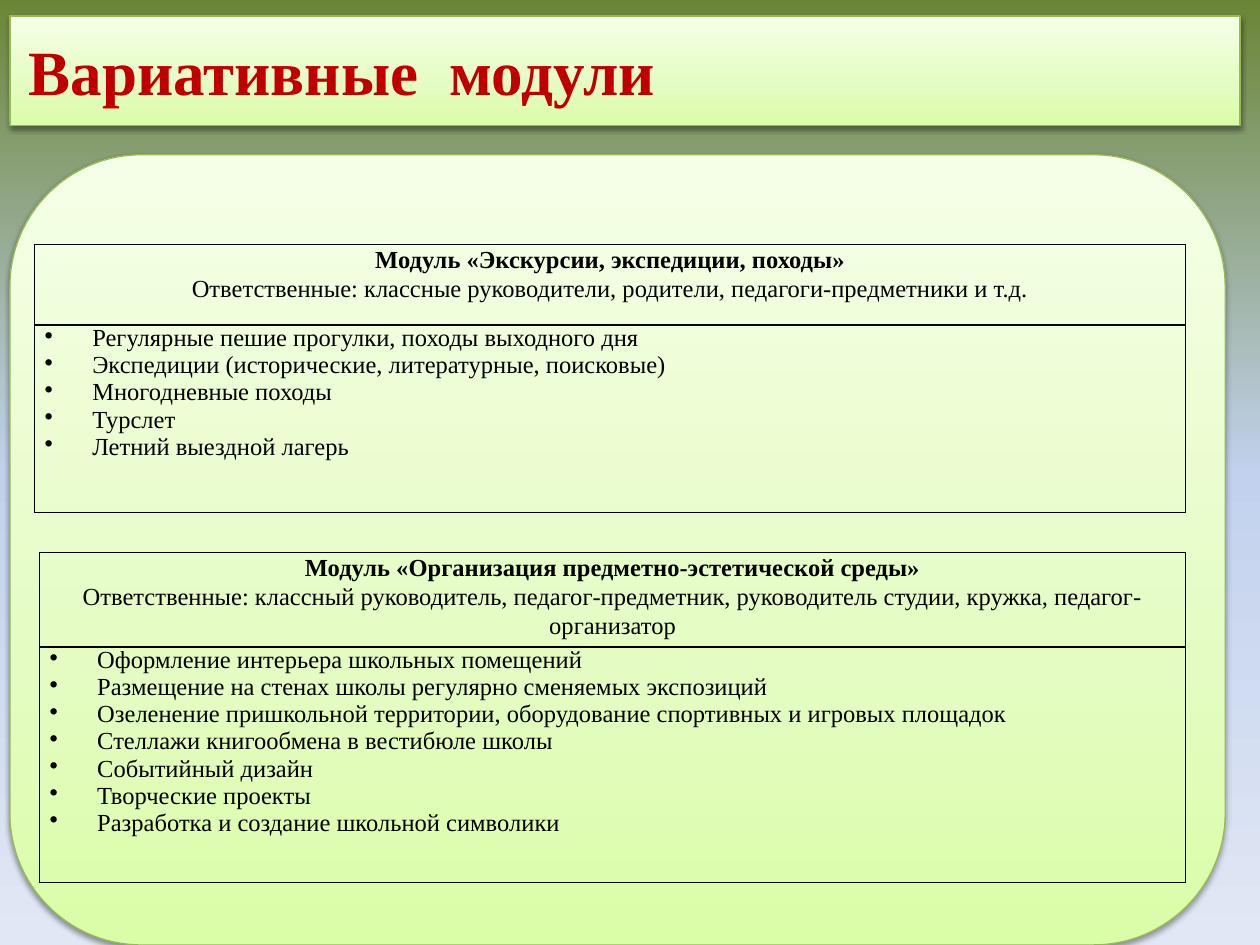
from lxml.etree import SubElement
from pptx import Presentation
from pptx.dml.color import RGBColor
from pptx.enum.shapes import MSO_SHAPE
from pptx.enum.text import MSO_ANCHOR, MSO_AUTO_SIZE, PP_ALIGN
from pptx.oxml.ns import qn
from pptx.util import Cm, Pt

BLACK = RGBColor(0x00, 0x00, 0x00)
RED = RGBColor(0xC0, 0x00, 0x00)
EDGE = RGBColor(0x98, 0xB9, 0x55)
LIME = RGBColor(0xDA, 0xFD, 0xA7)
PALE = RGBColor(0xE4, 0xFC, 0xC2)
CREAM = RGBColor(0xF5, 0xFF, 0xE7)
MOSS = RGBColor(0x6B, 0x85, 0x37)
SKY = RGBColor(0xC2, 0xD1, 0xED)
MIST = RGBColor(0xE1, 0xE8, 0xF5)

PANEL = [(0, LIME, 100), (35, PALE, 100), (100, CREAM, 100)]
BACK = [(0, MOSS, 74), (50, SKY, 100), (100, MIST, 100)]

TRIPS = [
    "Регулярные пешие прогулки, походы выходного дня",
    "Экспедиции (исторические, литературные, поисковые)",
    "Многодневные походы",
    "Турслет",
    "Летний выездной лагерь",
]
DESIGN = [
    "Оформление интерьера школьных помещений",
    "Размещение на стенах школы регулярно сменяемых экспозиций",
    "Озеленение пришкольной территории, оборудование спортивных и игровых площадок",
    "Стеллажи книгообмена в вестибюле школы",
    "Событийный дизайн",
    "Творческие проекты",
    "Разработка и создание школьной символики",
]


def add(root, tag, **attrs):
    return SubElement(root, qn(tag), {k: str(v) for k, v in attrs.items()})


def tint(root, color, alpha=100):
    node = add(root, "a:srgbClr", val=color)
    if alpha < 100:
        add(node, "a:alpha", val=alpha * 1000)


def blend(fill, root, stops, angle):
    fill.gradient()
    fill.gradient_angle = angle
    group = root.find(".//" + qn("a:gsLst"))
    for stop in list(group):
        group.remove(stop)
    for pos, color, alpha in stops:
        tint(add(group, "a:gs", pos=pos * 1000), color, alpha)


class Deck:
    font = "Times New Roman"
    size = Pt(14)

    def __init__(self):
        self.file = Presentation()
        self.file.slide_width = Cm(25.4)
        self.file.slide_height = Cm(19.05)
        self.slide = self.file.slides.add_slide(self.file.slide_layouts[5])
        blend(self.slide.background.fill, self.slide.element, BACK, 270)

    def style(self, para, size, color, bold=False):
        para.font.name = self.font
        para.font.size = size
        para.font.color.rgb = color
        para.font.bold = bold

    def dress(self, shape):
        blend(shape.fill, shape.element, PANEL, 90)
        shape.line.color.rgb = EDGE
        shape.line.width = Pt(0.75)
        shape.shadow.inherit = False
        effects = shape.element.spPr.find(qn("a:effectLst"))
        shadow = add(effects, "a:outerShdw", blurRad=Pt(3.1), dist=Pt(1.6),
                     dir=5400000, rotWithShape=0)
        tint(shadow, BLACK, 38)

    def title(self, text, left, top, width, height):
        shape = self.slide.shapes.title
        shape.left, shape.top = Cm(left), Cm(top)
        shape.width, shape.height = Cm(width), Cm(height)
        props = shape.element.spPr
        form = add(props, "a:prstGeom", prst="roundRect")
        add(form, "a:avLst")
        props.insert(1, form)
        self.dress(shape)
        frame = shape.text_frame
        frame.text = text
        frame.auto_size = MSO_AUTO_SIZE.NONE
        frame.vertical_anchor = MSO_ANCHOR.MIDDLE
        para = frame.paragraphs[0]
        para.alignment = PP_ALIGN.LEFT
        para.space_before, para.space_after = Pt(7), Pt(3)
        para._p.get_or_add_pPr().set("marL", str(Cm(0.13)))
        self.style(para, Pt(36), RED, True)

    def panel(self, left, top, width, height):
        self.dress(self.slide.shapes.add_shape(
            MSO_SHAPE.ROUNDED_RECTANGLE, Cm(left), Cm(top), Cm(width), Cm(height)))

    def frame(self, cell):
        cell.margin_left = cell.margin_right = Cm(0.2)
        cell.margin_top = cell.margin_bottom = 0
        cell.fill.background()
        props = cell._tc.get_or_add_tcPr()
        for spot, side in enumerate(("a:lnL", "a:lnR", "a:lnT", "a:lnB")):
            line = add(props, side, w=Pt(1))
            tint(add(line, "a:solidFill"), BLACK)
            props.insert(spot, line)

    def bullet(self, para):
        props = para._p.get_or_add_pPr()
        props.set("marL", str(Cm(0.96)))
        props.set("indent", str(Cm(-0.96)))
        mark = add(props, "a:buChar", char="•")
        props.insert(0, mark)

    def module(self, name, staff, items, left, top, width, rows):
        grid = self.slide.shapes.add_table(
            2, 1, Cm(left), Cm(top), Cm(width), Cm(sum(rows))).table
        grid.first_row = grid.horz_banding = False
        for row, height in zip(grid.rows, rows):
            row.height = Cm(height)
            self.frame(row.cells[0])
        head, body = grid.cell(0, 0).text_frame, grid.cell(1, 0).text_frame
        head.text = "\n".join((name, staff))
        for spot, para in enumerate(head.paragraphs):
            para.alignment = PP_ALIGN.CENTER
            para.line_spacing = 1.07
            self.style(para, self.size, BLACK, spot == 0)
        body.text = "\n".join(items)
        for para in body.paragraphs:
            para.alignment = PP_ALIGN.JUSTIFY
            self.style(para, self.size, BLACK)
            self.bullet(para)

    def save(self):
        self.file.save("out.pptx")


def main():
    deck = Deck()
    deck.title("Вариативные  модули", 0.2, 0.32, 24.8, 2.21)
    deck.panel(0.2, 3.12, 24.5, 15.93)
    deck.module(
        "Модуль «Экскурсии, экспедиции, походы»",
        "Ответственные: классные руководители, родители, педагоги-предметники и т.д.",
        TRIPS, 0.7, 4.93, 23.2, (1.62, 3.78))
    deck.module(
        "Модуль «Организация предметно-эстетической среды»",
        "Ответственные: классный руководитель, педагог-предметник, "
        "руководитель студии, кружка, педагог-организатор",
        DESIGN, 0.8, 11.14, 23.1, (1.9, 4.75))
    deck.save()


if __name__ == "__main__":
    main()
